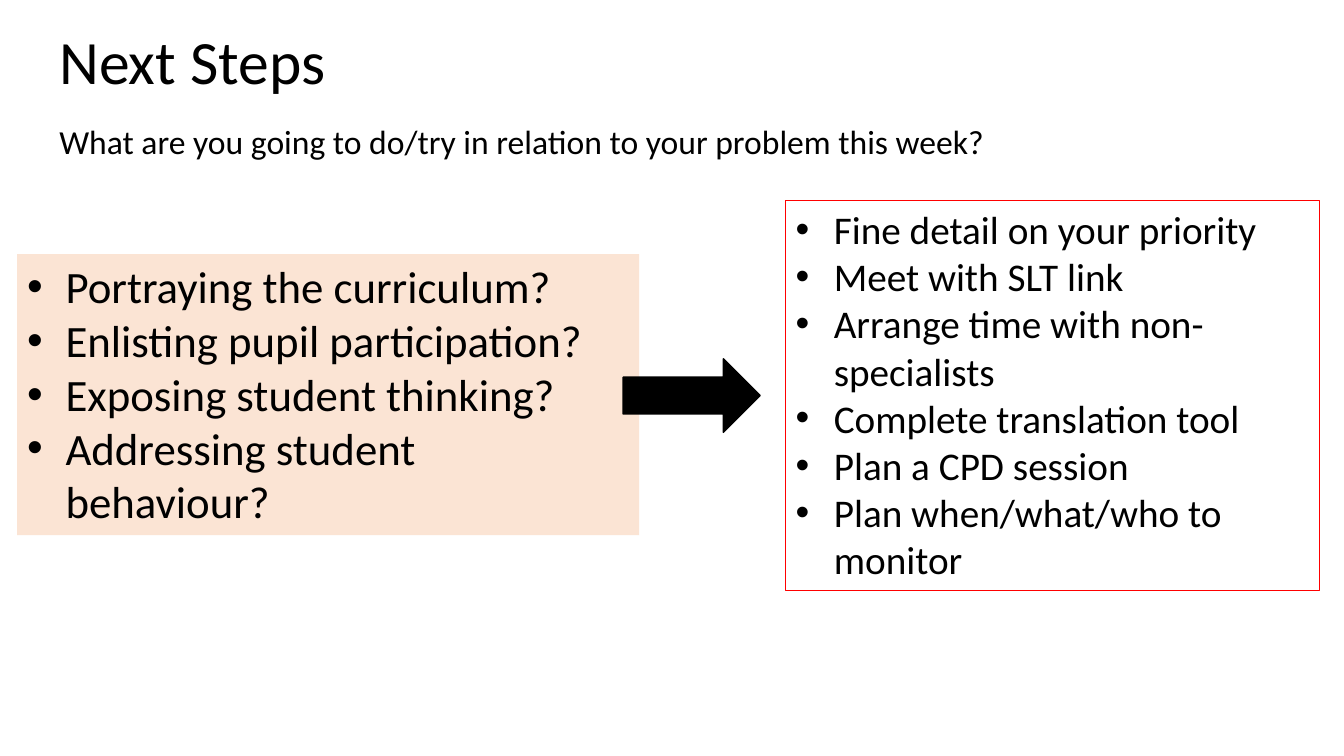
from lxml.etree import SubElement
from pptx import Presentation
from pptx.dml.color import RGBColor
from pptx.enum.shapes import MSO_SHAPE
from pptx.enum.text import MSO_ANCHOR, MSO_AUTO_SIZE, PP_ALIGN
from pptx.oxml.ns import qn
from pptx.util import Pt

PX = 9144
INDENT = 38 * PX


def color(value):
    return RGBColor.from_string(value)


def write(paragraph, text, size):
    paragraph.alignment = PP_ALIGN.LEFT
    paragraph.space_before = Pt(0)
    run = paragraph.add_run()
    run.text = text
    run.font.name = "Calibri"
    run.font.size = Pt(size)
    run.font.color.rgb = color("000000")


deck = Presentation()
deck.slide_width, deck.slide_height = 1333 * PX, 750 * PX
slide = deck.slides.add_slide(deck.slide_layouts[3])

heading = slide.shapes.title
heading.left, heading.top, heading.width, heading.height = 49 * PX, 26 * PX, 862 * PX, 77 * PX
heading.text_frame.auto_size = MSO_AUTO_SIZE.NONE
heading.text_frame.vertical_anchor = MSO_ANCHOR.MIDDLE
heading.text_frame.paragraphs[0].line_spacing = 0.9
write(heading.text_frame.paragraphs[0], "Next Steps", 44)

question = slide.shapes.add_textbox(49 * PX, 115 * PX, 1215 * PX, 50 * PX)
question.text_frame.word_wrap = True
write(question.text_frame.paragraphs[0],
      "What are you going to do/try in relation to your problem this week?", 24)

problems = [
    "Portraying the curriculum?",
    "Enlisting pupil participation?",
    "Exposing student thinking?",
    "Addressing student behaviour?",
]
actions = [
    "Fine detail on your priority",
    "Meet with SLT link",
    "Arrange time with non-specialists",
    "Complete translation tool",
    "Plan a CPD session",
    "Plan when/what/who to monitor",
]
panels = [
    (1, (17, 252, 617, 279), "FBE4D4", None, 32, problems),
    (2, (779, 199, 530, 387), "FFFFFF", "FF0000", 28, actions),
]
for index, box, fill, outline, size, items in panels:
    panel = slide.placeholders[index]
    panel.left, panel.top, panel.width, panel.height = [length * PX for length in box]
    panel.fill.solid()
    panel.fill.fore_color.rgb = color(fill)
    if outline:
        panel.line.color.rgb = color(outline)
        panel.line.width = Pt(0.75)
    frame = panel.text_frame
    frame.auto_size = MSO_AUTO_SIZE.NONE
    frame.vertical_anchor = MSO_ANCHOR.TOP
    for number, item in enumerate(items):
        paragraph = frame.add_paragraph() if number else frame.paragraphs[0]
        write(paragraph, item, size)
        properties = paragraph._p.get_or_add_pPr()
        properties.set("marL", str(INDENT))
        properties.set("indent", str(-INDENT))
        SubElement(properties, qn("a:buFont"), typeface="Arial")
        SubElement(properties, qn("a:buChar"), char="•")

arrow = slide.shapes.add_shape(MSO_SHAPE.RIGHT_ARROW, 618 * PX, 356 * PX, 136 * PX, 73 * PX)
arrow.shadow.inherit = False
arrow.fill.solid()
arrow.fill.fore_color.rgb = color("000000")
arrow.line.color.rgb = color("000000")
arrow.line.width = Pt(1)

deck.save("out.pptx")
